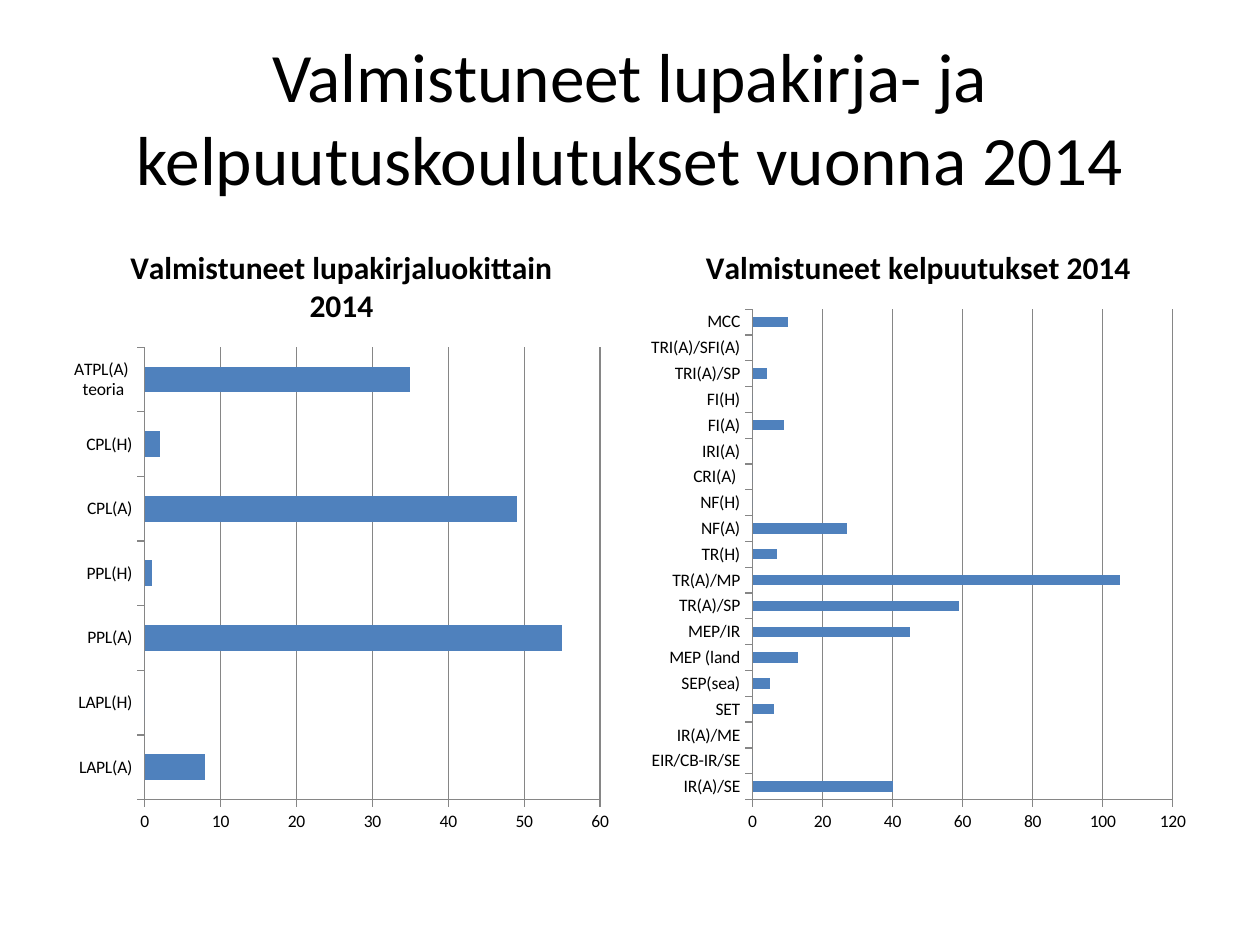
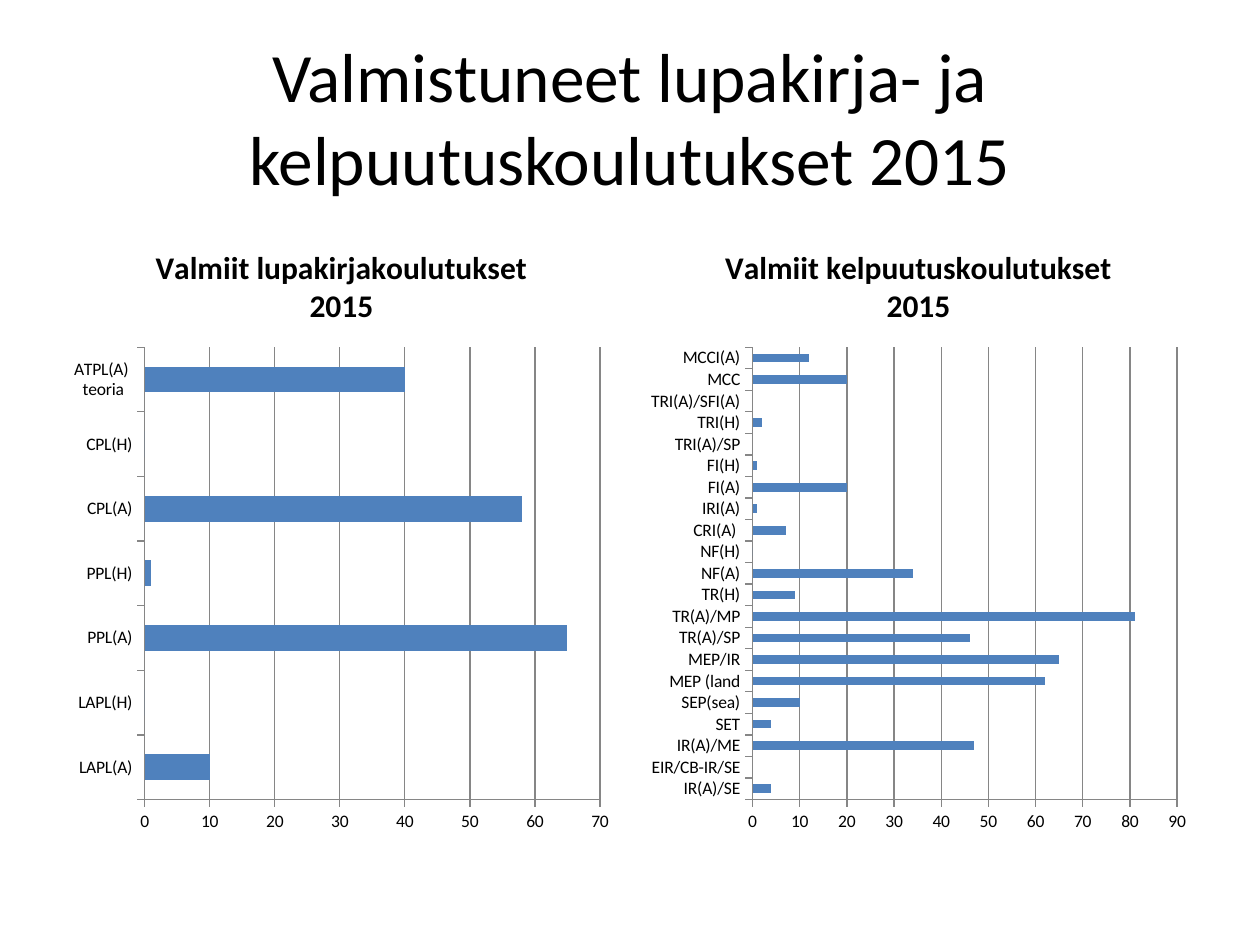
from pptx import Presentation
from pptx.chart.data import CategoryChartData
from pptx.dml.color import RGBColor
from pptx.enum.chart import XL_CHART_TYPE, XL_TICK_MARK
from pptx.enum.text import MSO_ANCHOR, PP_ALIGN
from pptx.util import Inches, Pt

# Content
LICENCES = ["LAPL(A)", "LAPL(H)", "PPL(A)", "PPL(H)", "CPL(A)", "CPL(H)",
            "ATPL(A)  teoria"]
RATINGS_2015 = ["IR(A)/SE", "EIR/CB-IR/SE", "IR(A)/ME", "SET", "SEP(sea)",
                "MEP (land", "MEP/IR", "TR(A)/SP", "TR(A)/MP", "TR(H)",
                "NF(A)", "NF(H)", "CRI(A) ", "IRI(A)", "FI(A)", "FI(H)",
                "TRI(A)/SP", "TRI(H)", "TRI(A)/SFI(A)", "MCC", "MCCI(A)"]
RATINGS_2014 = [c for c in RATINGS_2015 if c not in ("TRI(H)", "MCCI(A)")]

SLIDES = [
    ("Valmistuneet lupakirja- ja kelpuutuskoulutukset vuonna 2014", [
        ("Valmistuneet lupakirjaluokittain 2014", LICENCES,
         [8, 0, 55, 1, 49, 2, 35]),
        ("Valmistuneet kelpuutukset 2014", RATINGS_2014,
         [40, 0, 0, 6, 5, 13, 45, 59, 105, 7, 27, 0, 0, 0, 9, 0, 4, 0, 10]),
    ]),
    ("Valmistuneet lupakirja- ja kelpuutuskoulutukset 2015", [
        ("Valmiit lupakirjakoulutukset 2015", LICENCES,
         [10, 0, 65, 1, 58, 0, 40]),
        ("Valmiit kelpuutuskoulutukset 2015", RATINGS_2015,
         [4, None, 47, 4, 10, 62, 65, 46, 81, 9, 34, 0, 7, 1, 20, 1, None, 2,
          None, 20, 12]),
    ]),
]

# Shared style
FONT, BLACK, BLUE, GREY = "Calibri", "000000", "4F81BD", "868686"
SLIDE_W, MARGIN = 10, 0.5
CHART_W, CHART_H, CHART_TOP = 4.42, 4.95, 1.75


def rgb(color):
    return RGBColor.from_string(color)


def set_font(font, size, bold=False):
    font.name, font.size, font.bold = FONT, Pt(size), bold
    font.color.rgb = rgb(BLACK)


def set_line(line):
    line.color.rgb = rgb(GREY)
    line.width = Pt(0.75)


def add_title(s, text):
    box = s.shapes.add_textbox(Inches(MARGIN), Inches(0.3),
                               Inches(SLIDE_W - 2 * MARGIN), Inches(1.25))
    tf = box.text_frame
    tf.word_wrap = True
    tf.vertical_anchor = MSO_ANCHOR.MIDDLE
    p = tf.paragraphs[0]
    p.text = text
    p.alignment = PP_ALIGN.CENTER
    set_font(p.font, 39.6)


def add_bar_chart(s, left, title, categories, values):
    data = CategoryChartData()
    data.categories = categories
    data.add_series(title, values)
    chart = s.shapes.add_chart(XL_CHART_TYPE.BAR_CLUSTERED, Inches(left),
                               Inches(CHART_TOP), Inches(CHART_W),
                               Inches(CHART_H), data).chart
    set_font(chart.font, 10)
    chart.has_legend = False

    # Chart title
    chart.has_title = True
    p = chart.chart_title.text_frame.paragraphs[0]
    p.text = title
    set_font(p.font, 18, bold=True)
    chart.chart_title.include_in_layout = False

    # Bars
    plot = chart.plots[0]
    plot.gap_width = 150
    plot.vary_by_categories = False
    fill = plot.series[0].format.fill
    fill.solid()
    fill.fore_color.rgb = rgb(BLUE)

    # Axes
    for axis in (chart.category_axis, chart.value_axis):
        axis.major_tick_mark = XL_TICK_MARK.OUTSIDE
        axis.minor_tick_mark = XL_TICK_MARK.NONE
        set_line(axis.format.line)
    chart.value_axis.has_major_gridlines = True
    set_line(chart.value_axis.major_gridlines.format.line)


def main():
    prs = Presentation()
    prs.slide_width, prs.slide_height = Inches(SLIDE_W), Inches(7.5)
    for title, charts in SLIDES:
        s = prs.slides.add_slide(prs.slide_layouts[6])
        add_title(s, title)
        # One chart against each side margin
        lefts = (MARGIN, SLIDE_W - MARGIN - CHART_W)
        for left, chart in zip(lefts, charts):
            add_bar_chart(s, left, *chart)
    prs.save("out.pptx")


if __name__ == "__main__":
    main()
